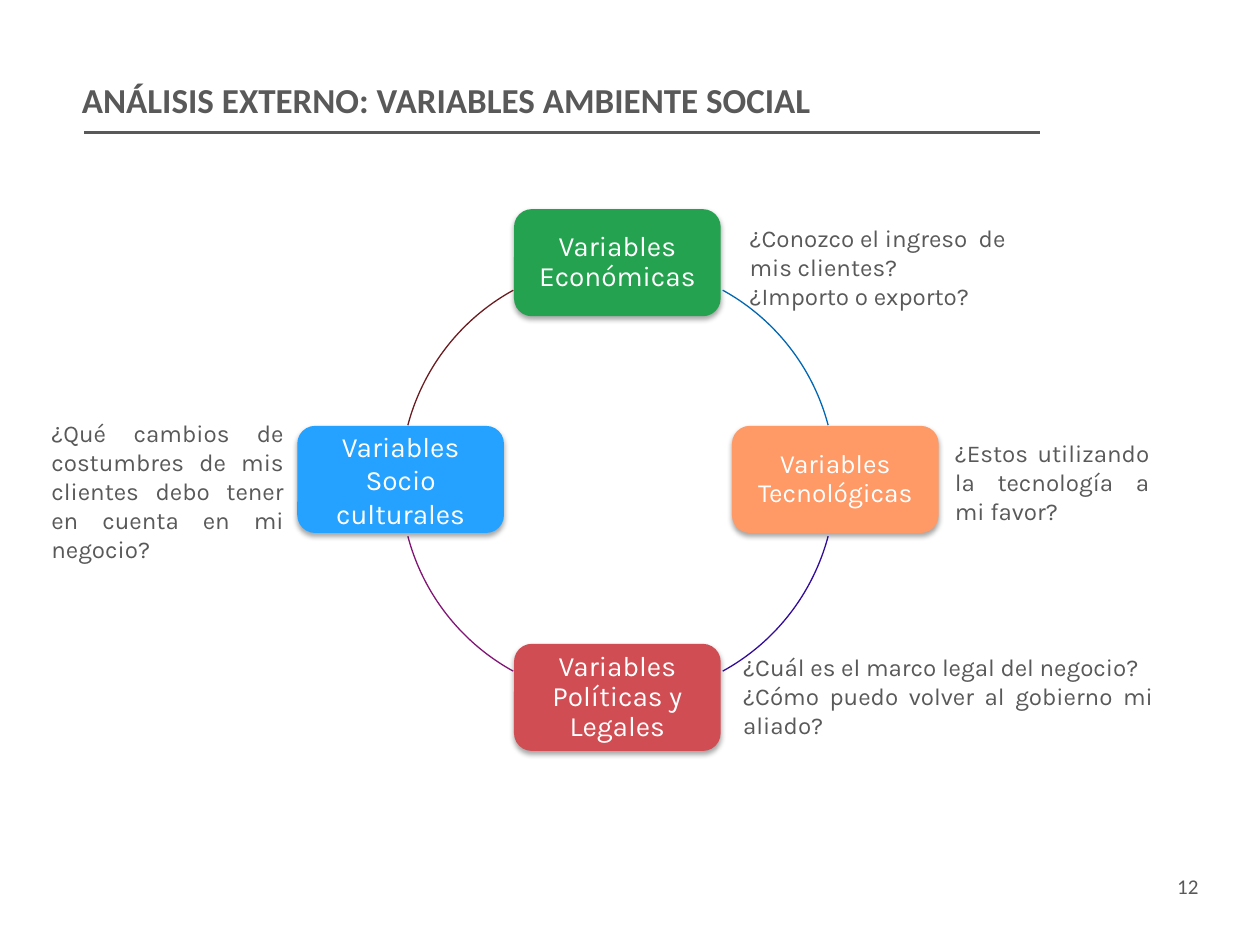
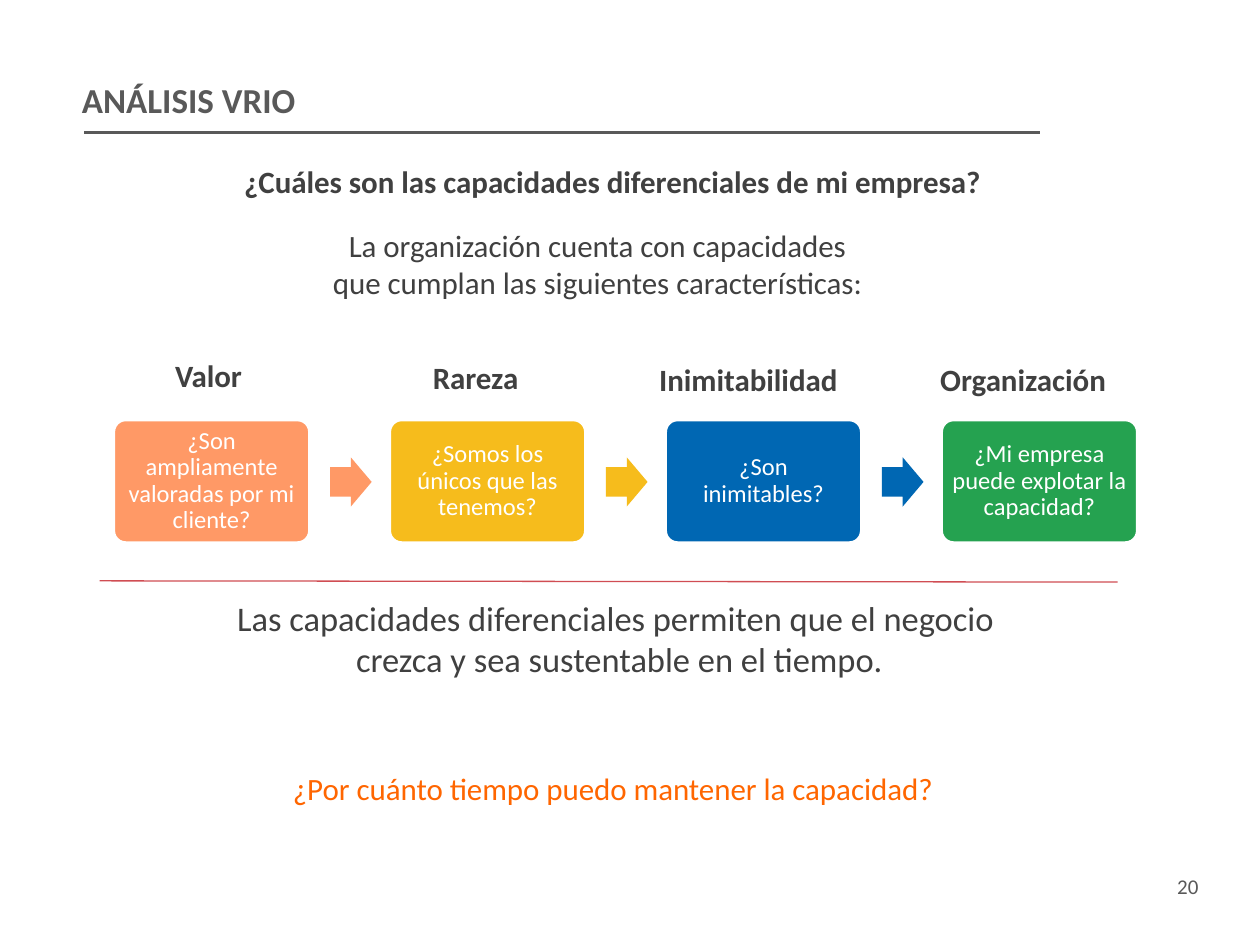
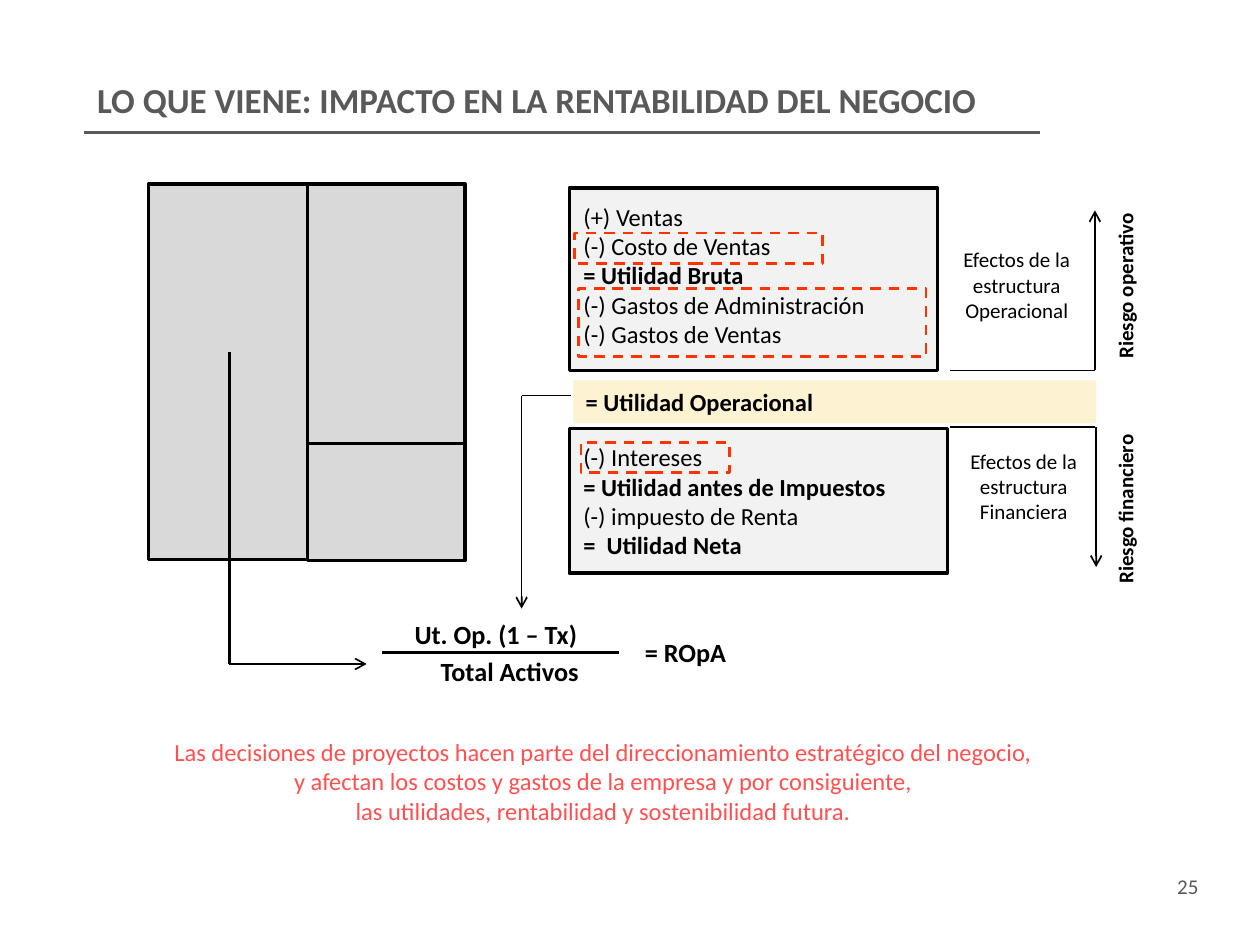
from dataclasses import dataclass

from lxml import etree
from pptx import Presentation, util as u
from pptx.dml.color import RGBColor
from pptx.enum import dml, shapes, text
from pptx.oxml import ns

# Shared look
SANS, KARLA = "Calibri", "Karla"
GREY, DARK, BLACK, WHITE = "595959", "404040", "000000", "FFFFFF"
GREEN, ORANGE, BLUE, RED, YELLOW = "25A250", "FF9966", "0067B3", "D04D53", "F6BC1C"
PANEL, BLOCK, BAND, DASH = "F2F2F2", "D9D9D9", "FDF2D2", "FF3300"
LEFT, CENTER = text.PP_ALIGN.LEFT, text.PP_ALIGN.CENTER
RIGHT, JUSTIFY = text.PP_ALIGN.RIGHT, text.PP_ALIGN.JUSTIFY
TOP, MIDDLE = text.MSO_ANCHOR.TOP, text.MSO_ANCHOR.MIDDLE
RECT, ROUND = shapes.MSO_SHAPE.RECTANGLE, shapes.MSO_SHAPE.ROUNDED_RECTANGLE
ARROW, ARC = shapes.MSO_SHAPE.RIGHT_ARROW, shapes.MSO_SHAPE.ARC


@dataclass
class Frame:
    left: float
    top: float
    width: float
    height: float

    def lengths(self) -> list:
        return [u.Inches(n) for n in (self.left, self.top, self.width, self.height)]


@dataclass
class Variable:
    """A card on the circle, the arc that follows it and its question."""
    lines: list[str]
    left: float
    top: float
    fill: str
    arc_start: float
    arc_color: str
    question: list[str]
    question_frame: Frame
    question_align: text.PP_ALIGN = JUSTIFY
    size: float = 16
    spacing: float = 0.9


@dataclass
class Capability:
    name: str
    name_frame: Frame
    question: str
    fill: str


@dataclass
class Line:
    start: tuple[float, float]
    end: tuple[float, float]
    width: float = 1
    arrow: bool = False


def rgb(color: str) -> RGBColor:
    return RGBColor.from_string(color)


# Drawing functions
def write(frame, lines: list[str], *, size: float, color: str = BLACK, font: str = SANS,
          bold: bool = False, align=LEFT, anchor=TOP, spacing: float = 1,
          insets: tuple[float, float] = (0.1, 0.05), bold_prefix: str = "") -> None:
    """Fill a text frame; lines that begin with bold_prefix are bold too."""
    frame.word_wrap = True
    frame.auto_size = text.MSO_AUTO_SIZE.NONE
    frame.vertical_anchor = anchor
    frame.margin_left = frame.margin_right = u.Inches(insets[0])
    frame.margin_top = frame.margin_bottom = u.Inches(insets[1])
    for index, line in enumerate(lines):
        para = frame.add_paragraph() if index else frame.paragraphs[0]
        para.alignment = align
        para.line_spacing = spacing
        span = para.add_run()
        span.text = line
        span.font.name = font
        span.font.size = u.Pt(size)
        span.font.bold = bold or bool(bold_prefix and line.startswith(bold_prefix))
        span.font.color.rgb = rgb(color)


def add_text(page, place: Frame, lines: list[str], *, rotation: float = 0, **style):
    box = page.shapes.add_textbox(*place.lengths())
    box.rotation = rotation
    write(box.text_frame, lines, **style)
    return box


def add_box(page, kind, place: Frame, *, fill: str = "", line: str = "",
            width: float = 2, dashed: bool = False):
    box = page.shapes.add_shape(kind, *place.lengths())
    box.shadow.inherit = False
    if fill:
        box.fill.solid()
        box.fill.fore_color.rgb = rgb(fill)
    else:
        box.fill.background()
    if line:
        box.line.color.rgb = rgb(line)
        box.line.width = u.Pt(width)
        if dashed:
            box.line.dash_style = dml.MSO_LINE.DASH
    else:
        box.line.fill.background()
    return box


def add_line(page, line: Line, color: str = BLACK):
    connector = page.shapes.add_connector(
        shapes.MSO_CONNECTOR.STRAIGHT, *[u.Inches(n) for n in line.start + line.end])
    connector.line.color.rgb = rgb(color)
    connector.line.width = u.Pt(line.width)
    properties = connector.element.spPr
    if line.arrow:
        etree.SubElement(properties.find(ns.qn("a:ln")), ns.qn("a:tailEnd"), type="arrow")
    etree.SubElement(properties, ns.qn("a:effectLst"))
    return connector


def add_shadow(box) -> None:
    effects = box.element.spPr.find(ns.qn("a:effectLst"))
    shadow = etree.SubElement(effects, ns.qn("a:outerShdw"), blurRad=str(u.Pt(3.1)),
                              dist=str(u.Pt(1.8)), dir="5400000", rotWithShape="0")
    color = etree.SubElement(shadow, ns.qn("a:srgbClr"), val=BLACK)
    etree.SubElement(color, ns.qn("a:alpha"), val="35000")


def new_page(deck, title: str, number: int, indent: float = 0):
    """Title, rule below it and page number."""
    page = deck.slides.add_slide(deck.slide_layouts[5])
    heading = page.shapes.title
    heading.left, heading.top, heading.width, heading.height = Frame(
        0.55, 0.57, 8.77, 0.64).lengths()
    write(heading.text_frame, [title], size=20, color=GREY, bold=True,
          insets=(0.1 + indent, 0.05))
    add_line(page, Line((8.25, 1.05), (0.67, 1.05), 2), GREY)
    add_text(page, Frame(9.14, 6.88, 0.47, 0.4), [str(number)], size=12, color=GREY,
             align=RIGHT)
    return page


# Slide 1: variables around a circle
VARIABLES = [
    Variable(["Variables Económicas"], 4.08, 1.66, GREEN, 298.8, BLUE,
             ["¿Conozco el ingreso  de mis clientes?", "¿Importo o exporto?"],
             Frame(5.85, 1.72, 2.32, 0.79), LEFT),
    Variable(["Variables Tecnológicas"], 5.81, 3.38, ORANGE, 14.8, "310B99",
             ["¿Estos utilizando la tecnología a mi favor?"],
             Frame(7.48, 3.43, 1.74, 0.79), size=15),
    Variable(["Variables Políticas y Legales"], 4.08, 5.11, RED, 118.8, "811575",
             ["¿Cuál es el marco legal del negocio?",
              "¿Cómo puedo volver al gobierno mi aliado?"],
             Frame(5.8, 5.13, 3.45, 0.79)),
    Variable(["Variables Socio", "culturales"], 2.36, 3.38, "25A2FF", 194.8, "6B1C20",
             ["¿Qué cambios de costumbres de mis clientes debo tener en cuenta en mi negocio?"],
             Frame(0.31, 3.27, 2.04, 1.26), spacing=1),
]
CIRCLE = Frame(3.18, 2.09, 3.45, 3.45)
ARC_SWEEP = 46.4
ANGLE_UNIT = 0.6  # adjustment value of one degree


def build_variables(deck) -> None:
    page = new_page(deck, "ANÁLISIS EXTERNO: VARIABLES AMBIENTE SOCIAL", 12)
    for item in VARIABLES:
        card = add_box(page, ROUND, Frame(item.left, item.top, 1.64, 0.85), fill=item.fill)
        add_shadow(card)
        write(card.text_frame, item.lines, size=item.size, color=WHITE, font=KARLA,
              align=CENTER, anchor=MIDDLE, spacing=item.spacing, insets=(0.07, 0.07))
        arc = add_box(page, ARC, CIRCLE, line=item.arc_color, width=0.75)
        arc.adjustments[0] = item.arc_start * ANGLE_UNIT
        arc.adjustments[1] = (item.arc_start + ARC_SWEEP) * ANGLE_UNIT
        add_text(page, item.question_frame, item.question, size=13.8, color=GREY,
                 font=KARLA, align=item.question_align)


# Slide 2: chain of four capabilities
CAPABILITIES = [
    Capability("Valor", Frame(1.04, 2.78, 1.23, 0.4),
               "¿Son ampliamente valoradas por mi cliente?", ORANGE),
    Capability("Rareza", Frame(3.16, 2.8, 1.23, 0.4),
               "¿Somos los únicos que las tenemos?", YELLOW),
    Capability("Inimitabilidad", Frame(5.06, 2.81, 1.76, 0.4),
               "¿Son inimitables?", BLUE),
    Capability("Organización", Frame(7.2, 2.81, 1.84, 0.4),
               "¿Mi empresa puede explotar la capacidad?", GREEN),
]


def build_vrio(deck) -> None:
    page = new_page(deck, "ANÁLISIS VRIO", 20)
    add_text(page, Frame(1.84, 1.24, 6.44, 0.4),
             ["¿Cuáles son las capacidades diferenciales de mi empresa?"],
             size=17.7, color=DARK, bold=True, align=JUSTIFY)
    add_text(page, Frame(0.57, 1.75, 8.4, 0.7),
             ["La organización cuenta con capacidades ",
              "que cumplan las siguientes características: "],
             size=17.7, color=DARK, align=CENTER)
    for index, item in enumerate(CAPABILITIES):
        left = 0.9 + 2.19 * index
        add_text(page, item.name_frame, [item.name], size=17.7, color=DARK, bold=True,
                 align=CENTER)
        card = add_box(page, ROUND, Frame(left, 3.33, 1.56, 0.98), fill=item.fill, line=WHITE)
        card.adjustments[0] = 0.1
        write(card.text_frame, [item.question], size=14, color=WHITE, align=CENTER,
              anchor=MIDDLE, spacing=0.9, insets=(0.06, 0.06))
        if item is not CAPABILITIES[-1]:
            arrow = add_box(page, ARROW, Frame(left + 1.72, 3.63, 0.33, 0.39), fill=item.fill)
            arrow.adjustments[0] = 0.6
    add_line(page, Line((0.79, 4.61), (8.87, 4.62), 0.75), RED)
    add_text(page, Frame(0.79, 4.69, 8.25, 0.76),
             ["Las capacidades diferenciales permiten que el negocio ",
              "crezca y sea sustentable en el tiempo."],
             size=19.7, color=DARK, align=CENTER)
    add_text(page, Frame(0.94, 6.06, 7.85, 0.4),
             ["¿Por cuánto tiempo puedo mantener la capacidad?"],
             size=17.7, color="FF6600", align=CENTER)


# Slide 3: income statement and return on assets
STATEMENT = [
    (Frame(4.52, 1.49, 2.92, 1.45),
     ["(+) Ventas", "(-) Costo de Ventas", "= Utilidad Bruta",
      "(-) Gastos de Administración", "(-) Gastos de Ventas"]),
    (Frame(4.52, 3.4, 3, 1.15),
     ["(-) Intereses", "= Utilidad antes de Impuestos", "(-) impuesto de Renta",
      "=  Utilidad Neta"]),
]
BALANCE = [Frame(1.18, 1.46, 2.5, 2.98), Frame(2.44, 1.46, 1.25, 2.07),
           Frame(2.44, 3.52, 1.25, 0.93)]
HIGHLIGHTS = [Frame(4.61, 3.51, 1.18, 0.24), Frame(4.56, 1.85, 1.97, 0.24),
              Frame(4.59, 2.29, 2.76, 0.54)]
LINES = [
    # From assets to the ratio
    Line((1.82, 2.79), (1.82, 5.27), 1.5),
    Line((1.82, 5.27), (2.91, 5.27), arrow=True),
    # From operating profit to the ratio
    Line((4.53, 3.14), (4.14, 3.14)),
    Line((4.14, 3.14), (4.14, 4.83), arrow=True),
    # Fraction bar
    Line((3.03, 5.18), (4.91, 5.18), 1.5),
    # Operating and financial risk
    Line((7.54, 2.94), (8.69, 2.94)),
    Line((8.69, 2.94), (8.69, 1.67), arrow=True),
    Line((7.54, 3.39), (8.69, 3.39)),
    Line((8.7, 3.39), (8.7, 4.5), arrow=True),
]
RATIO = [
    ("Ut. Op. (1 – Tx)", Frame(2.49, 4.86, 2.89, 0.35), CENTER),
    ("Total Activos", Frame(2.6, 5.15, 2.89, 0.35), CENTER),
    ("= ROpA", Frame(5.02, 5, 2.11, 0.35), LEFT),
]
EFFECTS = [
    ("Efectos de la estructura Operacional", Frame(7.34, 1.91, 1.46, 0.71)),
    ("Efectos de la estructura Financiera", Frame(7.32, 3.51, 1.61, 0.71)),
]
RISKS = [("Riesgo operativo", 2.12), ("Riesgo financiero", 3.89)]


def build_profitability(deck) -> None:
    page = new_page(deck, "LO QUE VIENE: IMPACTO EN LA RENTABILIDAD DEL NEGOCIO", 25,
                    indent=0.12)
    for place, lines in STATEMENT:
        panel = add_box(page, RECT, place, fill=PANEL, line=BLACK)
        write(panel.text_frame, lines, size=14, insets=(0.11, 0.11), bold_prefix="=")
    band = add_box(page, RECT, Frame(4.55, 3.02, 4.15, 0.34), fill=BAND)
    write(band.text_frame, ["= Utilidad Operacional"], size=14, bold=True)
    for place in BALANCE:
        add_box(page, RECT, place, fill=BLOCK, line=BLACK)
    for line in LINES:
        add_line(page, line)
    for label, place, align in RATIO:
        add_text(page, place, [label], size=15, bold=True, align=align)
    for label, place in EFFECTS:
        add_text(page, place, [label], size=12, align=CENTER)
    for label, top in RISKS:
        add_text(page, Frame(8.2, top, 1.46, 0.3), [label], rotation=270, size=12,
                 bold=True, align=CENTER)
    for place in HIGHLIGHTS:
        add_box(page, RECT, place, line=DASH, width=1.5, dashed=True)
    add_text(page, Frame(1.06, 5.8, 7.5, 0.81),
             ["Las decisiones de proyectos hacen parte del direccionamiento estratégico "
              "del negocio, ",
              "y afectan los costos y gastos de la empresa y por consiguiente, ",
              "las utilidades, rentabilidad y sostenibilidad futura. "],
             size=14, color="FF5050", align=CENTER)


def main() -> None:
    deck = Presentation()
    deck.slide_width, deck.slide_height = u.Inches(10), u.Inches(7.5)
    build_variables(deck)
    build_vrio(deck)
    build_profitability(deck)
    deck.save("out.pptx")


if __name__ == "__main__":
    main()
